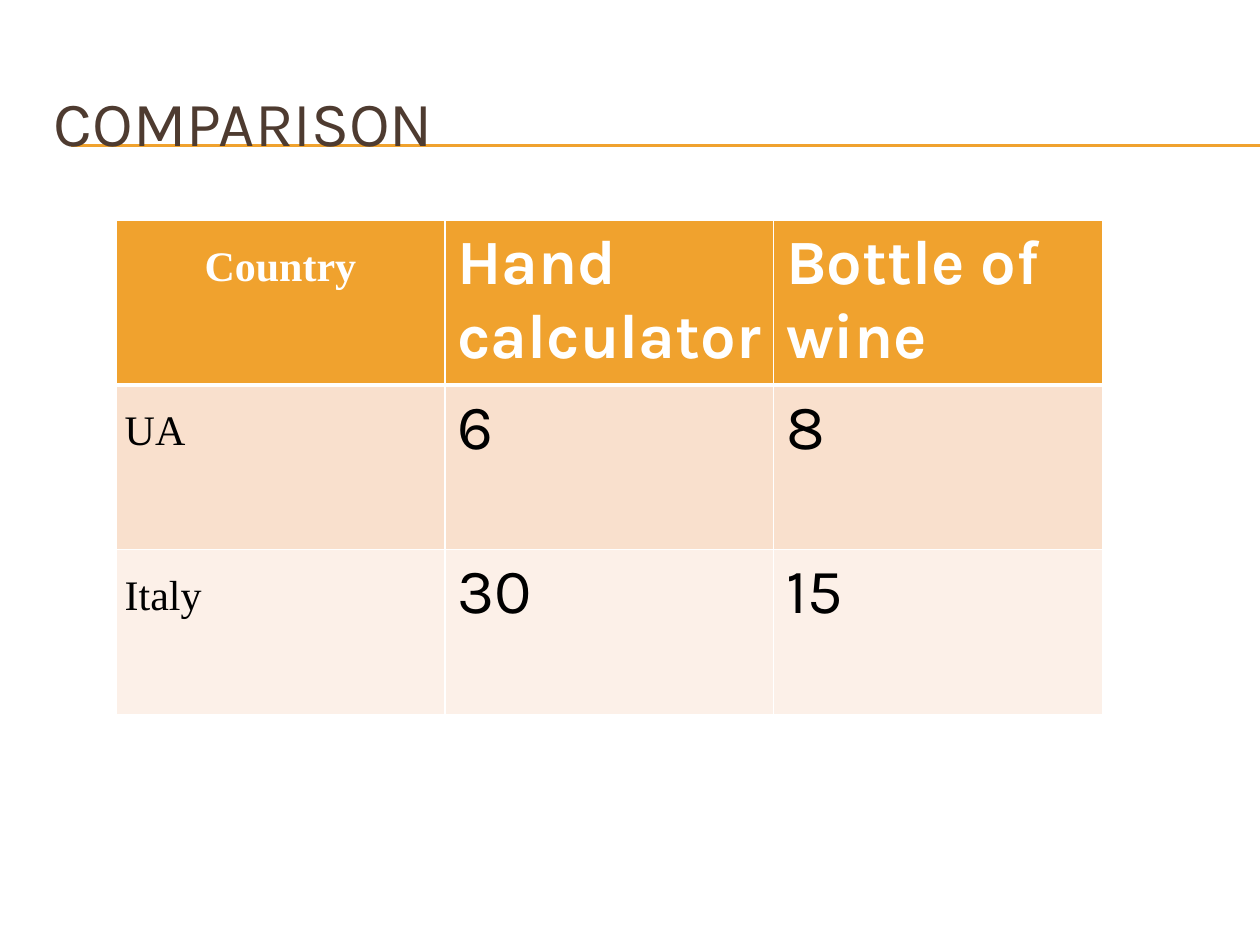
import pptx
import pptx.dml.color
import pptx.enum.shapes
import pptx.enum.text
import pptx.oxml
import pptx.oxml.ns
import pptx.util
from pptx.dml.color import RGBColor
from pptx.util import Inches

ORANGE = RGBColor(0xF0, 0xA2, 0x2E)
BROWN = RGBColor(0x4E, 0x3B, 0x30)
WHITE = RGBColor(0xFF, 0xFF, 0xFF)
BLACK = RGBColor(0x00, 0x00, 0x00)
ROW_FILLS = [ORANGE, RGBColor(0xF9, 0xE0, 0xCD), RGBColor(0xFC, 0xF0, 0xE8)]
NAMESPACE = pptx.oxml.ns.nsdecls("a")


def add_run(paragraph, text, size, font_name, color, bold=False):
    run = paragraph.add_run()
    run.text = text
    run.font.size = pptx.util.Pt(size)
    run.font.name = font_name
    run.font.color.rgb = color
    run.font.bold = bold


def set_borders(cell, widths):
    """Draw white borders; widths maps each side (L, R, T, B) to points."""
    properties = cell._tc.get_or_add_tcPr()
    for position, (side, width) in enumerate(widths.items()):
        border = pptx.oxml.parse_xml(
            f'<a:ln{side} {NAMESPACE} w="{pptx.util.Pt(width)}"><a:solidFill>'
            f'<a:srgbClr val="{WHITE}"/></a:solidFill></a:ln{side}>')
        properties.insert(position, border)


presentation = pptx.Presentation()
presentation.slide_width = Inches(10)
presentation.slide_height = Inches(7.5)
slide = presentation.slides.add_slide(presentation.slide_layouts[6])

# Double rule under the title
for y in (1.15, 1.16):
    rule = slide.shapes.add_connector(
        pptx.enum.shapes.MSO_CONNECTOR.STRAIGHT,
        Inches(0.56), Inches(y), Inches(10), Inches(y))
    rule.line.color.rgb = ORANGE
    rule.line.width = pptx.util.Pt(0.75)
    rule._element.spPr.append(pptx.oxml.parse_xml(f"<a:effectLst {NAMESPACE}/>"))

# Title
title = slide.shapes.add_textbox(Inches(0.33), Inches(0.5), Inches(9.5), Inches(0.92))
title.text_frame.word_wrap = True
title.text_frame.vertical_anchor = pptx.enum.text.MSO_ANCHOR.MIDDLE
add_run(title.text_frame.paragraphs[0], "COMPARISON", 36, "Karla", BROWN)

# Comparison table
rows = [
    ["Country", "Hand calculator", "Bottle of wine"],
    ["UA", "6", "8"],
    ["Italy", "30", "15"],
]
table = slide.shapes.add_table(
    3, 3, Inches(0.92), Inches(1.75), Inches(7.83), Inches(3.92)).table
for row_index, row in enumerate(rows):
    is_header = row_index == 0
    for column_index, text in enumerate(row):
        cell = table.cell(row_index, column_index)
        cell.fill.solid()
        cell.fill.fore_color.rgb = ROW_FILLS[row_index]
        set_borders(cell, {"L": 1, "R": 1, "T": 3 if row_index == 1 else 1,
                           "B": 3 if is_header else 1})
        paragraph = cell.text_frame.paragraphs[0]
        size, font_name = 36, "Karla"
        if column_index == 0:
            size, font_name = 24, "Times New Roman"
            cell.margin_left = cell.margin_right = Inches(0.07)
            cell.margin_top = cell.margin_bottom = 0
            paragraph.line_spacing = 1.5
            if is_header:
                paragraph.alignment = pptx.enum.text.PP_ALIGN.CENTER
        add_run(paragraph, text, size, font_name,
                WHITE if is_header else BLACK, is_header)

presentation.save("out.pptx")
